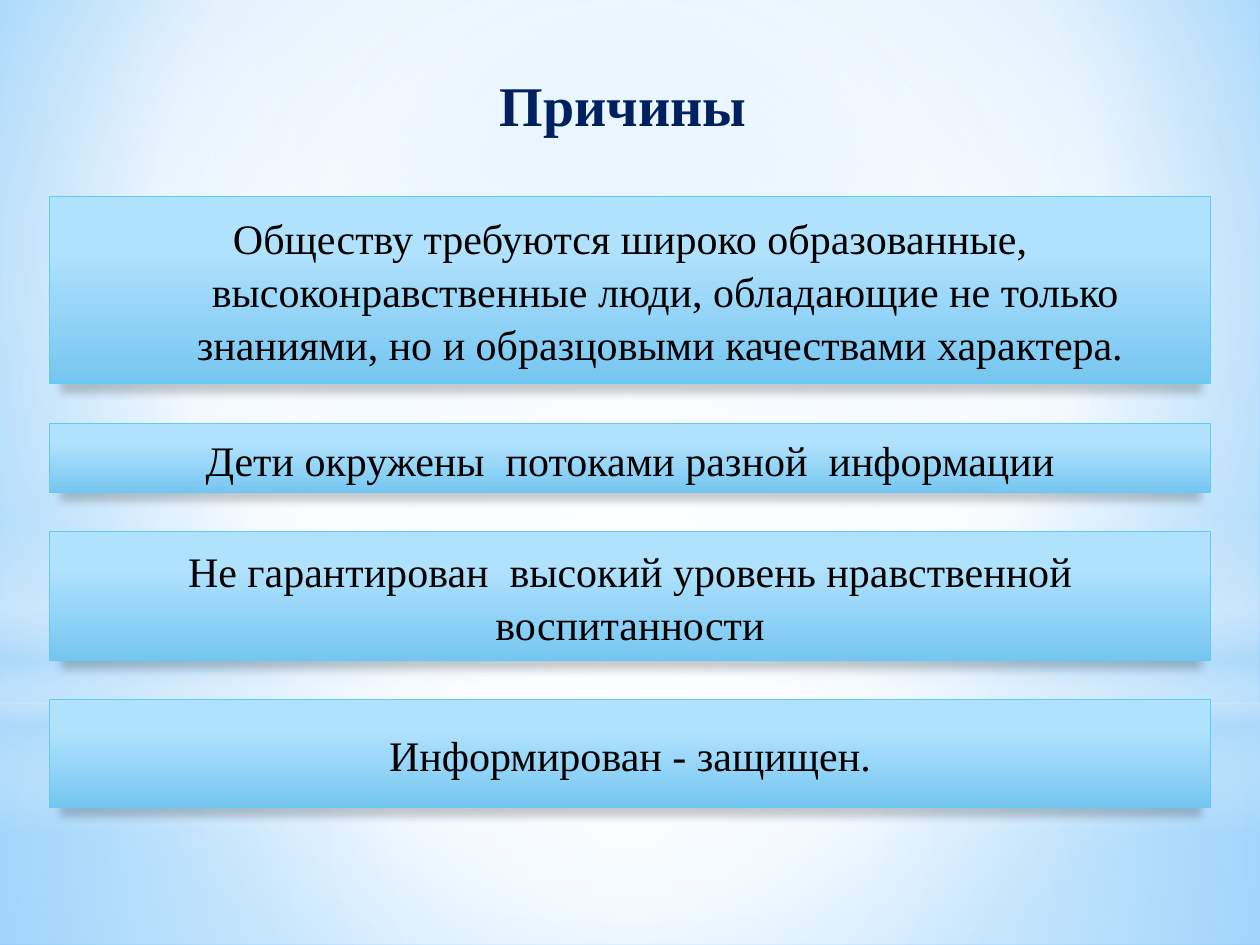
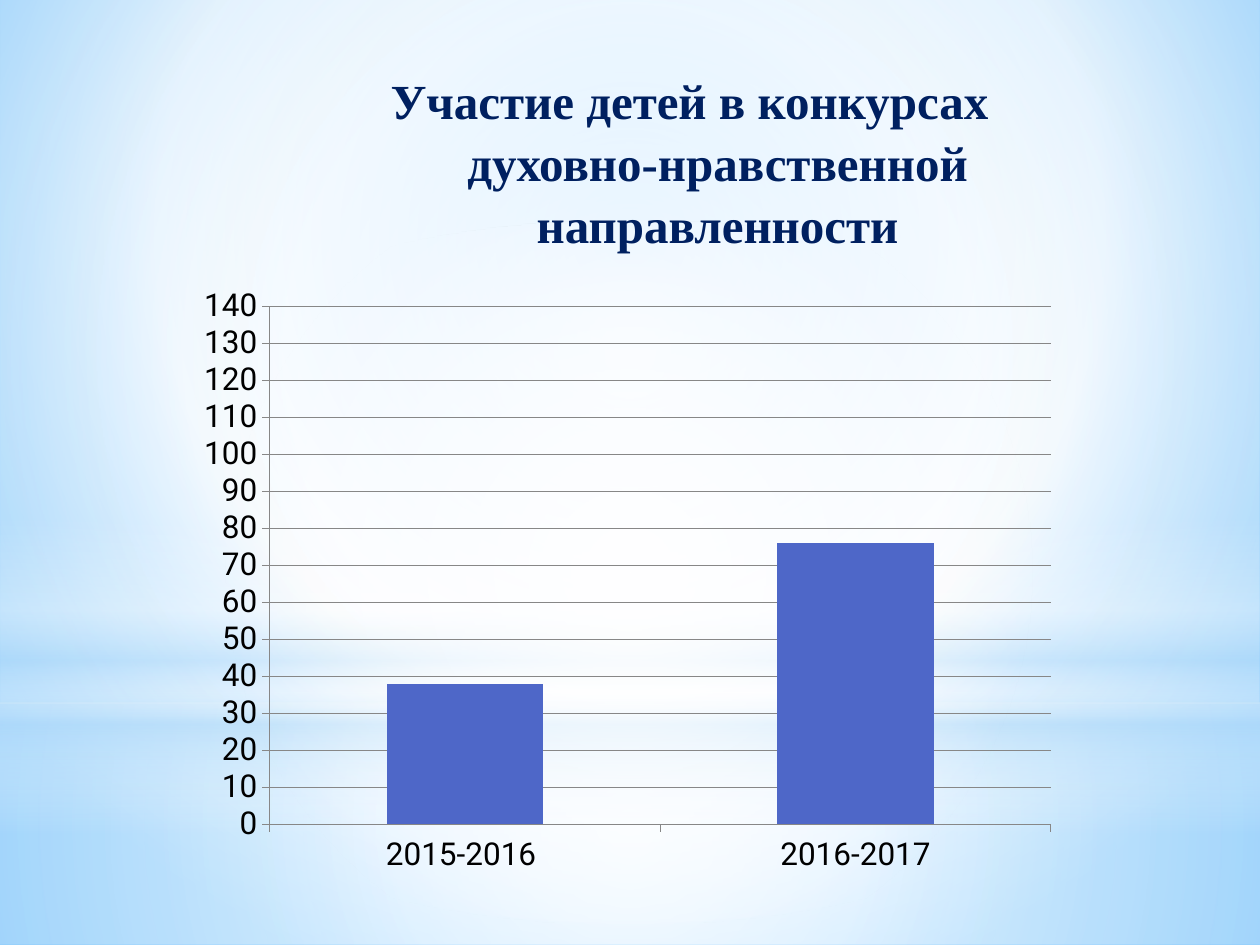
from dataclasses import dataclass
from typing import Any

from lxml.etree import SubElement
from pptx import Presentation
from pptx.chart.data import CategoryChartData
from pptx.dml.color import RGBColor
from pptx.enum.chart import XL_CHART_TYPE, XL_TICK_MARK
from pptx.enum.shapes import MSO_SHAPE
from pptx.enum.text import MSO_ANCHOR, PP_ALIGN
from pptx.oxml import parse_xml
from pptx.oxml.ns import nsdecls, qn
from pptx.util import Pt

PX = 9144
COLORS = {
    "white": "FFFFFF", "haze": "B4DCFA", "sky": "9ED5FF", "deep": "5BB9FF",
    "box_top": "B1E2FD", "box_bottom": "76C6F1", "box_line": "5ECCF3",
    "title": "002060", "text": "000000", "bar": "4E67C8", "grid": "878787",
}
SERIF = "Times New Roman"
CENTER = (50, 50, 50, 50)


@dataclass(frozen=True)
class Stop:
    pos: int
    color: str
    opacity: int = 100


@dataclass(frozen=True)
class Gradient:
    stops: tuple[Stop, ...]
    focus: tuple[int, ...] = ()


@dataclass(frozen=True)
class Area:
    left: int
    top: int
    width: int
    height: int

    def emu(self) -> tuple[int, ...]:
        return tuple(v * PX for v in (self.left, self.top, self.width, self.height))


@dataclass(frozen=True)
class Glow:
    area: Area
    gradient: Gradient
    kind: MSO_SHAPE = MSO_SHAPE.RECTANGLE


@dataclass(frozen=True)
class Reason:
    top: int
    height: int
    text: str
    hanging: int = 56


BACKDROP = Gradient((Stop(0, "sky"), Stop(60, "white"), Stop(100, "deep")), (20, 10, 20, 60))
BOX_FILL = Gradient((Stop(28, "box_top"), Stop(100, "box_bottom")))
GLOWS = (
    Glow(Area(0, 558, 1000, 192), Gradient(
        (Stop(0, "white", 91), Stop(37, "white", 76), Stop(100, "haze", 79)), CENTER)),
    Glow(Area(0, 0, 1000, 558), Gradient(
        (Stop(0, "white", 89), Stop(48, "white", 62), Stop(100, "haze", 79)), CENTER)),
    Glow(Area(0, 412, 1000, 250), Gradient(
        (Stop(0, "white", 0), Stop(29, "white", 30), Stop(45, "haze", 40),
         Stop(55, "white", 26), Stop(65, "haze", 60), Stop(100, "white", 0)))),
    Glow(Area(0, 175, 1000, 558), Gradient(
        (Stop(0, "white"), Stop(56, "white", 0)), CENTER), MSO_SHAPE.OVAL),
)
REASONS = (
    Reason(156, 148, "Обществу требуются широко образованные, высоконравственные люди, "
           "обладающие не только знаниями, но и образцовыми качествами характера. "),
    Reason(336, 55, "Дети окружены  потоками разной  информации"),
    Reason(422, 102, "Не гарантирован  высокий уровень нравственной воспитанности", 0),
    Reason(555, 86, "Информирован - защищен."),
)


def rgb(name: str) -> RGBColor:
    return RGBColor.from_string(COLORS[name])


def apply(target: Any, values: dict[str, Any]) -> None:
    for name, value in values.items():
        setattr(target, name, value)


def gradient_xml(gradient: Gradient) -> Any:
    grad = parse_xml(f'<a:gradFill {nsdecls("a")} rotWithShape="1"><a:gsLst/></a:gradFill>')
    for stop in gradient.stops:
        gs = SubElement(grad[0], qn("a:gs"), pos=str(stop.pos * 1000))
        clr = SubElement(gs, qn("a:srgbClr"), val=COLORS[stop.color])
        if stop.opacity < 100:
            SubElement(clr, qn("a:alpha"), val=str(stop.opacity * 1000))
    if gradient.focus:
        shade = SubElement(grad, qn("a:path"))
        shade.set("path", "circle")
        sides = {side: str(v * 1000) for side, v in zip("ltrb", gradient.focus)}
        SubElement(shade, qn("a:fillToRect"), sides)
    else:
        SubElement(grad, qn("a:lin"), ang="5400000", scaled="0")
    return grad


def swap_fill(fill: Any, parent: Any, gradient: Gradient) -> None:
    fill.solid()
    solid = next(parent.iter(qn("a:solidFill")))
    solid.getparent().replace(solid, gradient_xml(gradient))


def add_filled(s: Any, area: Area, gradient: Gradient, kind: MSO_SHAPE) -> Any:
    sp = s.shapes.add_shape(kind, *area.emu())
    sp.shadow.inherit = False
    sp.line.fill.background()
    swap_fill(sp.fill, sp._element.spPr, gradient)
    return sp


def add_shadow(sp: Any) -> None:
    effects = sp._element.spPr.find(qn("a:effectLst"))
    shadow = SubElement(effects, qn("a:outerShdw"), blurRad="63500", dist="50800",
                        dir="5400000", sx="98000", sy="98000", algn="b", rotWithShape="0")
    clr = SubElement(shadow, qn("a:srgbClr"), val=COLORS["text"])
    SubElement(clr, qn("a:alpha"), val="20000")


def write(tf: Any, text: str, size: int, color: str, bold: bool, hanging: int,
          anchor: MSO_ANCHOR) -> None:
    apply(tf, {"word_wrap": True, "vertical_anchor": anchor})
    p = tf.paragraphs[0]
    p.text = text
    apply(p, {"alignment": PP_ALIGN.CENTER, "line_spacing": 1.05})
    pPr = p._p.get_or_add_pPr()
    pPr.set("marL", str(hanging * PX))
    pPr.set("indent", str(-hanging * PX))
    for r in p.runs:
        apply(r.font, {"size": Pt(size), "name": SERIF, "bold": bold})
        r.font.color.rgb = rgb(color)


def add_title(s: Any, area: Area, text: str, size: int, hanging: int = 0) -> None:
    tb = s.shapes.add_textbox(*area.emu())
    write(tb.text_frame, text, size, "title", True, hanging, MSO_ANCHOR.TOP)


def add_reason(s: Any, reason: Reason) -> None:
    area = Area(39, reason.top, 922, reason.height)
    sp = add_filled(s, area, BOX_FILL, MSO_SHAPE.RECTANGLE)
    apply(sp.line, {"width": Pt(0.75)})
    sp.line.color.rgb = rgb("box_line")
    add_shadow(sp)
    write(sp.text_frame, reason.text, 24, "text", False, reason.hanging, MSO_ANCHOR.MIDDLE)


def add_slide(prs: Any) -> Any:
    s = prs.slides.add_slide(prs.slide_layouts[6])
    swap_fill(s.background.fill, s._element, BACKDROP)
    for glow in GLOWS:
        add_filled(s, glow.area, glow.gradient, glow.kind)
    return s


def add_contest_chart(s: Any) -> None:
    data = CategoryChartData()
    data.categories = ["2015-2016 ", "2016-2017"]
    data.add_series("Series 1", (38, 76))
    area = Area(148, 219, 700, 484)
    chart = s.shapes.add_chart(XL_CHART_TYPE.COLUMN_CLUSTERED, *area.emu(), data).chart
    apply(chart, {"has_legend": False, "has_title": False})
    apply(chart.font, {"size": Pt(18), "name": "Roboto"})
    chart.font.color.rgb = rgb("text")
    plot = chart.plots[0]
    apply(plot, {"vary_by_categories": False, "gap_width": 150})
    fill = plot.series[0].format.fill
    fill.solid()
    fill.fore_color.rgb = rgb("bar")
    values = chart.value_axis
    apply(values, {"minimum_scale": 0, "maximum_scale": 140, "major_unit": 10,
                   "has_major_gridlines": True})
    for axis in (chart.category_axis, values):
        axis.major_tick_mark = XL_TICK_MARK.OUTSIDE
    for part in (chart.category_axis, values, values.major_gridlines):
        part.format.line.width = Pt(0.75)
        part.format.line.color.rgb = rgb("grid")


def main() -> None:
    prs = Presentation()
    apply(prs, {"slide_width": 1000 * PX, "slide_height": 750 * PX})

    s = add_slide(prs)
    for reason in REASONS:
        add_reason(s, reason)
    add_title(s, Area(144, 48, 712, 88), "Причины ", 32)

    s = add_slide(prs)
    add_title(s, Area(196, 49, 712, 94),
              "Участие детей в конкурсах \vдуховно-нравственной направленности", 28, 35)
    add_contest_chart(s)
    prs.save("out.pptx")


if __name__ == "__main__":
    main()
